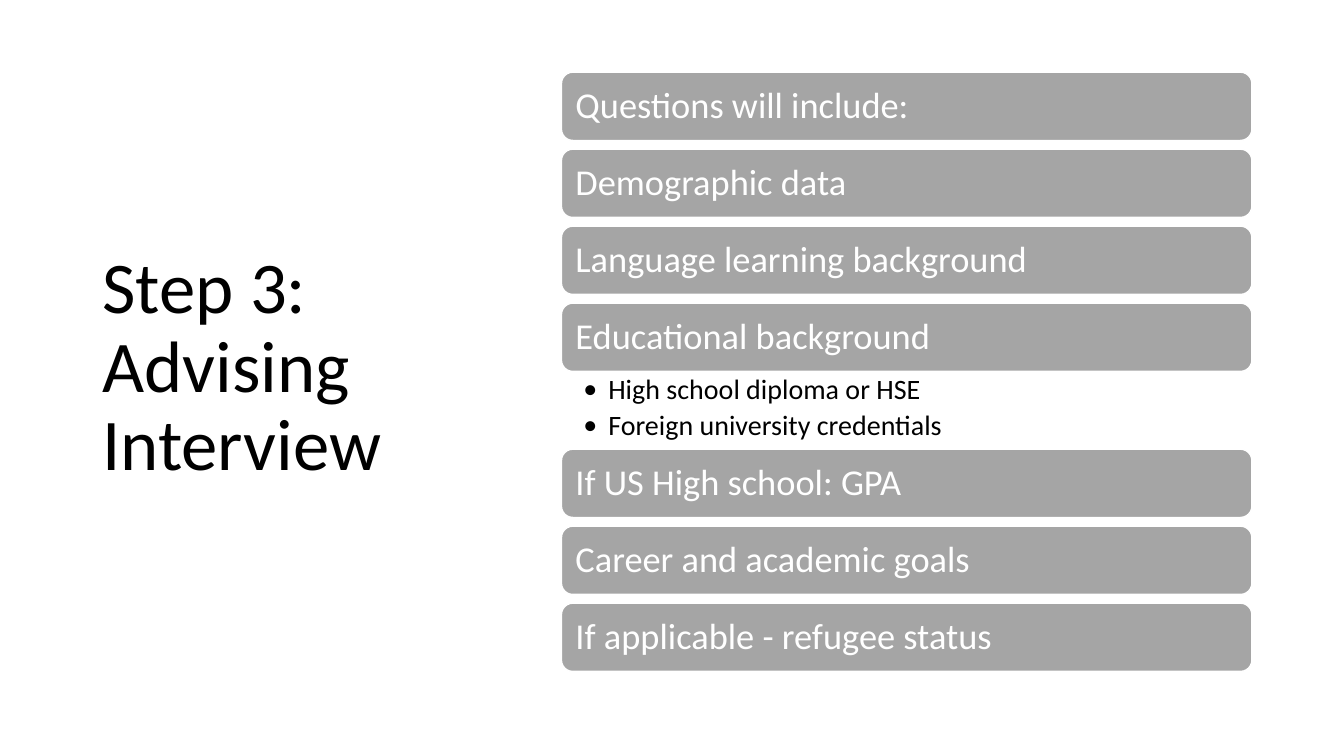
from dataclasses import dataclass

from lxml.etree import SubElement
from pptx import Presentation
from pptx.dml.color import RGBColor
from pptx.enum.shapes import MSO_SHAPE as Preset
from pptx.enum.text import MSO_ANCHOR as Anchor, PP_ALIGN as Align
from pptx.oxml.ns import qn
from pptx.util import Cm, Pt


@dataclass(frozen=True)
class Theme:
    """Colours, font and type sizes of the slide."""
    font: str = "Calibri"
    dark: RGBColor = RGBColor(0, 0, 0)
    light: RGBColor = RGBColor(255, 255, 255)
    bar: RGBColor = RGBColor(0xA5, 0xA5, 0xA5)
    title_size: int = 52
    topic_size: int = 26
    detail_size: int = 20


THEME = Theme()
TOPICS = [
    ("Questions will include:", []),
    ("Demographic data", []),
    ("Language learning background", []),
    ("Educational background",
     ["High school diploma or HSE", "Foreign university credentials"]),
    ("If US High school: GPA", []),
    ("Career and academic goals", []),
    ("If applicable - refugee status", []),
]
LIST_LEFT, LIST_TOP, LIST_WIDTH = Cm(14.15), Cm(1.82), Cm(17.4)
BAR_HEIGHT, BAR_GAP, DETAILS_HEIGHT = Cm(1.72), Cm(0.22), Cm(1.96)


def add_bullet(paragraph):
    """Give a paragraph a round bullet with a hanging indent."""
    properties = paragraph._p.get_or_add_pPr()
    indent = Cm(0.63)
    properties.set("marL", str(indent))
    properties.set("indent", str(-indent))
    SubElement(properties, qn("a:buFont")).set("typeface", THEME.font)
    SubElement(properties, qn("a:buChar")).set("char", "•")


def write_text(shape, lines, size, color, anchor=Anchor.MIDDLE,
               inset_x=Cm(0.25), inset_y=Cm(0.13), space_after=0, bullets=False):
    """Fill a shape with formatted paragraphs."""
    frame = shape.text_frame
    frame.word_wrap = True
    frame.vertical_anchor = anchor
    frame.margin_left = frame.margin_right = inset_x
    frame.margin_top = frame.margin_bottom = inset_y
    frame.text = "\n".join(lines)
    for paragraph in frame.paragraphs:
        paragraph.alignment = Align.LEFT
        paragraph.line_spacing = 0.9
        paragraph.space_after = Pt(space_after)
        font = paragraph.runs[0].font
        font.name, font.size = THEME.font, Pt(size)
        font.color.rgb = color
        if bullets:
            add_bullet(paragraph)


def add_title(slide, text):
    """Place the slide title on the left."""
    box = slide.shapes.add_textbox(Cm(2.33), Cm(1.55), Cm(9.37), Cm(15.47))
    write_text(box, [text], THEME.title_size, THEME.dark)


def add_topic_bar(slide, top, text):
    """Draw one rounded bar with its topic."""
    bar = slide.shapes.add_shape(
        Preset.ROUNDED_RECTANGLE, LIST_LEFT, top, LIST_WIDTH, BAR_HEIGHT)
    bar.shadow.inherit = False
    bar.fill.solid()
    bar.fill.fore_color.rgb = THEME.bar
    bar.line.color.rgb = THEME.light
    bar.line.width = Pt(1)
    write_text(bar, [text], THEME.topic_size, THEME.light, inset_x=Cm(0.27))


def add_details(slide, top, lines):
    """Place the bulleted details below a bar."""
    box = slide.shapes.add_textbox(LIST_LEFT, top, LIST_WIDTH, DETAILS_HEIGHT)
    write_text(box, lines, THEME.detail_size, THEME.dark, anchor=Anchor.TOP,
               inset_x=Cm(0.55), inset_y=Cm(0.1), space_after=4, bullets=True)


def add_topic_list(slide, topics):
    """Stack the topic bars, with details in place of the gap where given."""
    top = LIST_TOP
    for text, details in topics:
        add_topic_bar(slide, top, text)
        top += BAR_HEIGHT
        if details:
            add_details(slide, top, details)
        top += DETAILS_HEIGHT if details else BAR_GAP


def main():
    """Build and save the slide."""
    presentation = Presentation()
    presentation.slide_width, presentation.slide_height = Cm(33.87), Cm(19.05)
    slide = presentation.slides.add_slide(presentation.slide_layouts[6])
    add_title(slide, "Step 3: Advising Interview")
    add_topic_list(slide, TOPICS)
    presentation.save("out.pptx")


if __name__ == "__main__":
    main()
